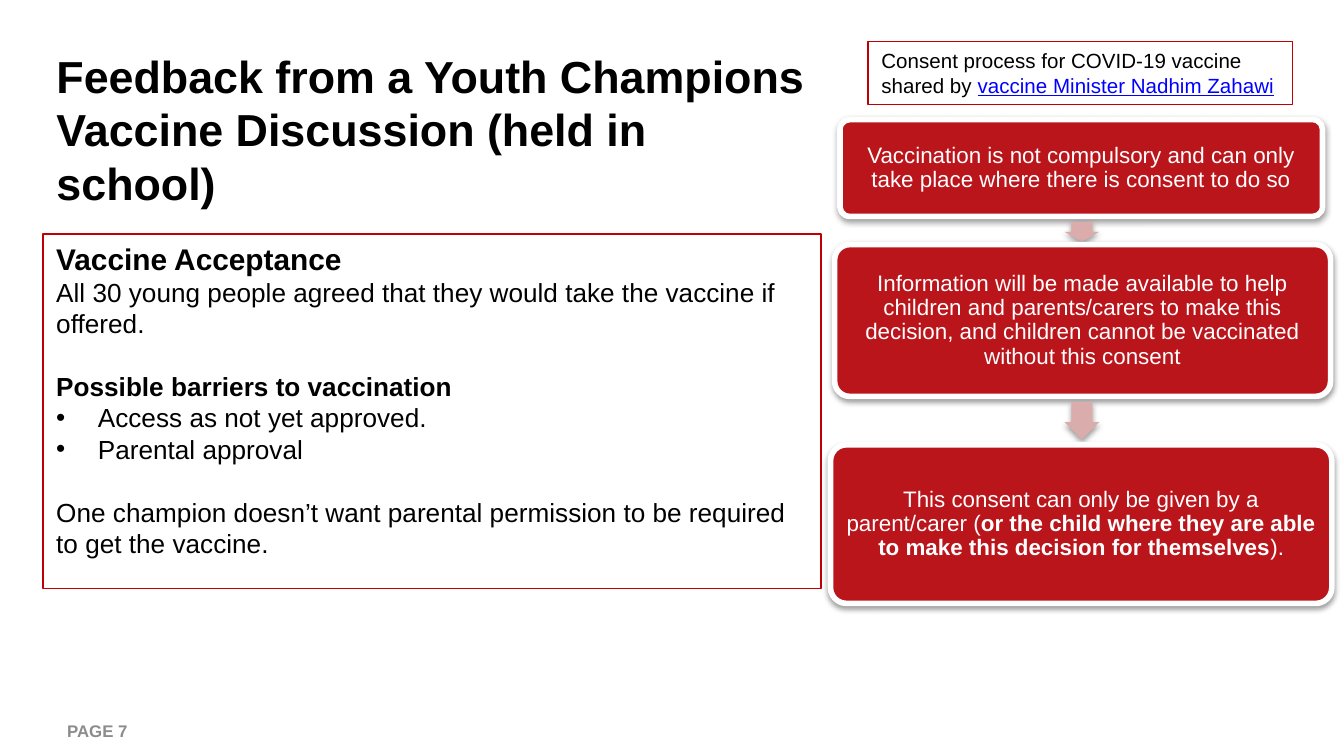
from lxml import etree
from pptx import Presentation
from pptx import util as u
from pptx.dml.color import RGBColor
from pptx.enum import shapes, text
from pptx.oxml.ns import qn

FONT = "Arial"
BLACK, WHITE, RED, BORDER = "000000", "FFFFFF", "BB151C", "C00000"
ARROW, LINK, GREY = "DAACAC", "0000FF", "8C8C8C"
FLOW_CENTRE = 8.05


def colour(value):
    return RGBColor.from_string(value)


def style_span(span, size, tint=BLACK, bold=False):
    font = span.font
    font.name, font.size, font.bold = FONT, u.Pt(size), bold
    font.color.rgb = colour(tint)


def set_frame(frame, anchor, inset_x=0.1, inset_y=0.05):
    frame.word_wrap = True
    frame.auto_size = text.MSO_AUTO_SIZE.NONE
    frame.vertical_anchor = anchor
    frame.margin_left = frame.margin_right = u.Inches(inset_x)
    frame.margin_top = frame.margin_bottom = u.Inches(inset_y)


def add_shape(page, preset, left, top, width, height, fill=None, line=None, weight=0.75):
    shape = page.shapes.add_shape(preset, *map(u.Inches, (left, top, width, height)))
    shape.shadow.inherit = False
    if fill:
        shape.fill.solid()
        shape.fill.fore_color.rgb = colour(fill)
    else:
        shape.fill.background()
    if line:
        shape.line.color.rgb = colour(line)
        shape.line.width = u.Pt(weight)
    else:
        shape.line.fill.background()
    return shape


def add_soft_shadow(shape):
    effects = shape._element.spPr.find(qn("a:effectLst"))
    shadow = etree.SubElement(effects, qn("a:outerShdw"), blurRad=str(u.Pt(3.1)),
                              dist=str(u.Pt(1.6)), dir="5400000", rotWithShape="0")
    tint = etree.SubElement(shadow, qn("a:srgbClr"), val=BLACK)
    etree.SubElement(tint, qn("a:alpha"), val="38000")


def add_bullet(para):
    props = para._p.get_or_add_pPr()
    props.set("marL", str(u.Inches(0.31)))
    props.set("indent", str(u.Inches(-0.31)))
    etree.SubElement(props, qn("a:buFont"), typeface=FONT)
    etree.SubElement(props, qn("a:buChar"), char="•")


def add_title(page, wording):
    title = page.shapes.title
    title.left, title.top, title.width, title.height = map(u.Inches, (0.32, 0.31, 5.87, 0.91))
    frame = title.text_frame
    set_frame(frame, text.MSO_ANCHOR.TOP)
    frame.margin_right = u.Inches(0.17)
    frame.text = wording
    para = frame.paragraphs[0]
    para.alignment = text.PP_ALIGN.LEFT
    for span in para.runs:
        style_span(span, 24, bold=True)


def add_feedback(page, lines):
    """Each line is wording, size, bold, bulleted, space before."""
    box = add_shape(page, shapes.MSO_SHAPE.RECTANGLE, 0.32, 1.74, 5.79, 2.64, line=BORDER)
    frame = box.text_frame
    set_frame(frame, text.MSO_ANCHOR.TOP)
    frame.text = "\n".join(line[0] for line in lines)
    for para, (_, size, bold, bulleted, gap) in zip(frame.paragraphs, lines):
        para.alignment = text.PP_ALIGN.LEFT
        if gap:
            para.space_before = u.Pt(gap)
        if bulleted:
            add_bullet(para)
        style_span(para.runs[0], size, bold=bold)


def add_step(page, left, top, width, height, spans):
    box = add_shape(page, shapes.MSO_SHAPE.ROUNDED_RECTANGLE, left, top, width, height,
                    RED, WHITE, 3)
    box.adjustments[0] = 0.1
    add_soft_shadow(box)
    set_frame(box.text_frame, text.MSO_ANCHOR.MIDDLE, 0.05)
    para = box.text_frame.paragraphs[0]
    para.alignment = text.PP_ALIGN.CENTER
    para.line_spacing = 0.9
    for wording, bold in spans:
        span = para.add_run()
        span.text = wording
        style_span(span, 12, WHITE, bold)


def add_flow_arrow(page, top, height):
    width = 0.26
    arrow = add_shape(page, shapes.MSO_SHAPE.DOWN_ARROW, FLOW_CENTRE - width / 2, top,
                      width, height, ARROW)
    arrow.adjustments[0], arrow.adjustments[1] = 0.6, 0.5
    add_soft_shadow(arrow)


def add_source_note(page, wording, link):
    box = add_shape(page, shapes.MSO_SHAPE.RECTANGLE, 6.46, 0.31, 3.16, 0.47, WHITE, BORDER)
    set_frame(box.text_frame, text.MSO_ANCHOR.TOP)
    para = box.text_frame.paragraphs[0]
    para.alignment = text.PP_ALIGN.LEFT
    for part, tint in ((wording, BLACK), (link, LINK)):
        span = para.add_run()
        span.text = part
        style_span(span, 11, tint)
        span.font.underline = tint == LINK


def add_page_label(page, wording):
    box = page.shapes.add_textbox(*map(u.Inches, (0.41, 5.29, 2.33, 0.3)))
    set_frame(box.text_frame, text.MSO_ANCHOR.MIDDLE, 0.09, 0.04)
    box.text_frame.text = wording
    style_span(box.text_frame.paragraphs[0].runs[0], 9, GREY, True)


def main():
    # Widescreen page, 16:9
    deck = Presentation()
    deck.slide_width = u.Inches(10)
    deck.slide_height = u.Inches(10 * 9 / 16)
    page = deck.slides.add_slide(deck.slide_layouts[5])

    # Title and page label
    add_title(page, "Feedback from a Youth Champions\vVaccine Discussion (held in school)")
    add_page_label(page, "PAGE 7")

    # Feedback from the discussion
    line_gap = 16.8
    add_feedback(page, [
        ("Vaccine Acceptance", 16, True, False, 0),
        ("All 30 young people agreed that they would take the vaccine if offered.",
         14, False, False, 0),
        ("Possible barriers to vaccination", 14, True, False, line_gap),
        ("Access as not yet approved.", 14, False, True, 0),
        ("Parental approval", 14, False, True, 0),
        ("One champion doesn’t want parental permission to be required to get the vaccine.",
         14, False, False, line_gap),
    ])

    # Consent process, top to bottom
    add_step(page, 6.25, 0.89, 3.59, 0.72, [
        ("Vaccination is not compulsory and can only take place where there is consent to do so",
         False)])
    add_flow_arrow(page, 1.65, 0.15)
    add_step(page, 6.21, 1.82, 3.69, 1.13, [
        ("Information will be made available to help children and parents/carers to make this "
         "decision, and children cannot be vaccinated without this consent", False)])
    add_flow_arrow(page, 2.99, 0.28)
    add_step(page, 6.18, 3.31, 3.73, 1.18, [
        ("This consent can only be given by a parent/carer (", False),
        ("or the child where they are able to make this decision for themselves", True),
        (").", False)])

    # Source of the consent process
    add_source_note(page, "Consent process for COVID-19 vaccine shared by ",
                    "vaccine Minister Nadhim Zahawi")

    deck.save("out.pptx")


if __name__ == "__main__":
    main()
